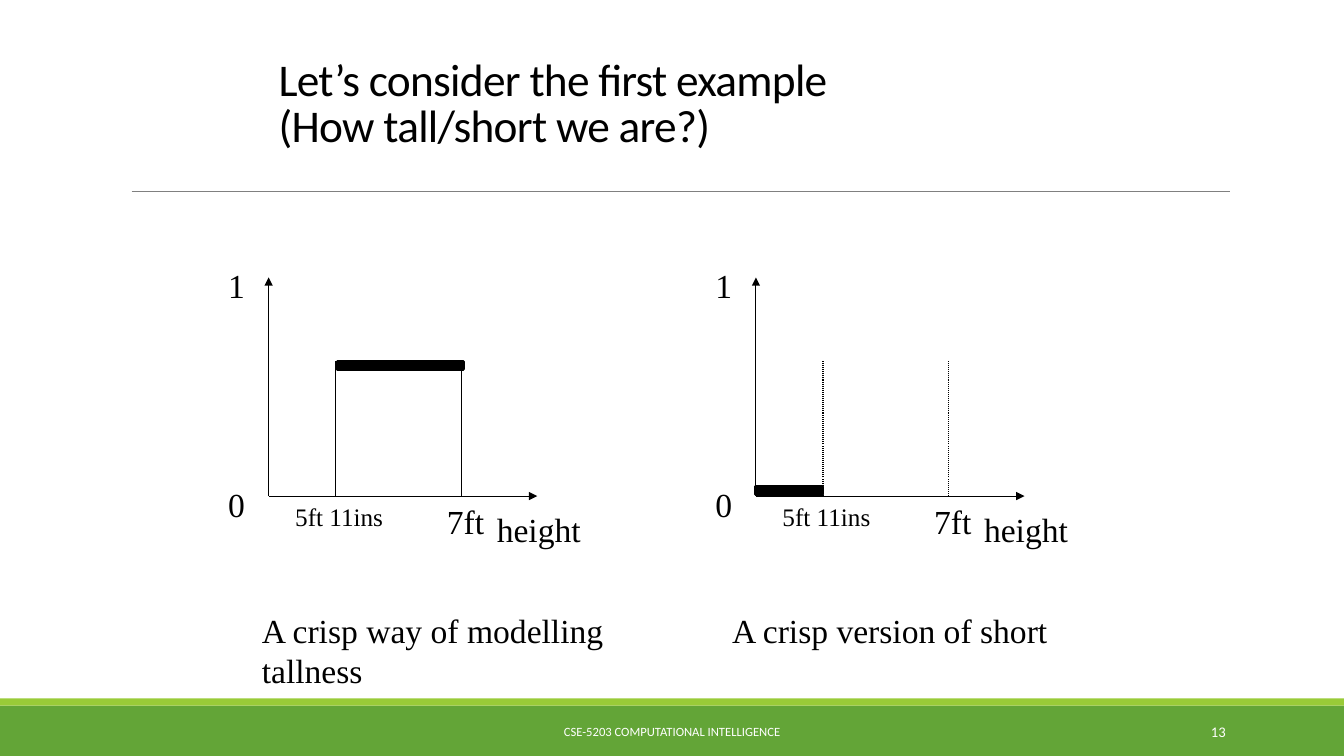
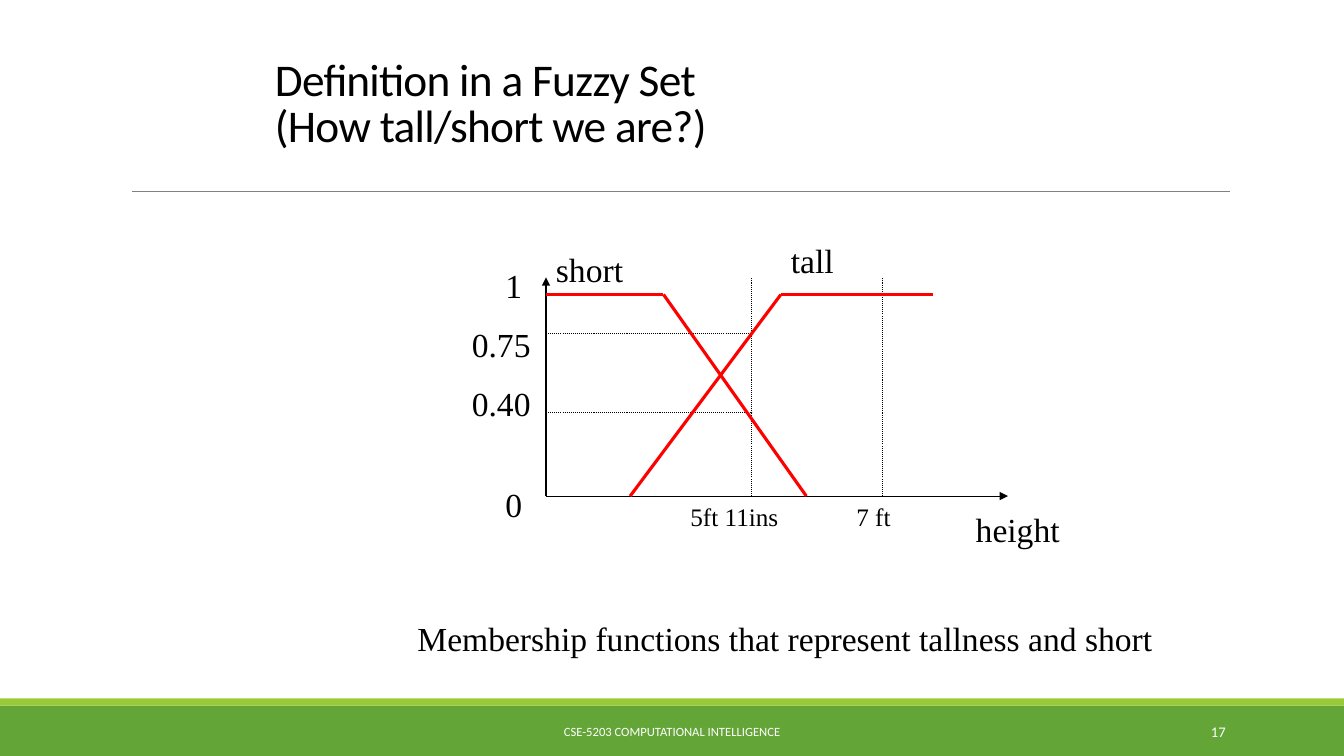
"""Build two slides that compare crisp and fuzzy sets of height."""
from lxml.etree import SubElement
from pptx import Presentation
from pptx.dml.color import RGBColor
from pptx.enum.dml import MSO_LINE
from pptx.enum.shapes import MSO_CONNECTOR, MSO_SHAPE
from pptx.enum.text import MSO_ANCHOR as ANCHOR, PP_ALIGN as ALIGN
from pptx.oxml.ns import qn
from pptx.util import Cm, Pt

BLACK, WHITE, GREY, RED = "000000", "FFFFFF", "808080", "FF0000"
GREEN, LIME = "63A537", "99CB38"
SANS, SERIF = "Calibri", "Times New Roman"
WIDTH, HEIGHT = 33.87, 19.05
BASE, AXIS_HEIGHT = 12.5, 5.51


def color(value):
    return RGBColor.from_string(value)


def write(box, text, font=SERIF, size=24, ink=BLACK, align=ALIGN.LEFT,
          anchor=ANCHOR.TOP, line_spacing=None, tracking=None):
    frame = box.text_frame
    frame.word_wrap = True
    frame.vertical_anchor = anchor
    para = frame.paragraphs[0]
    para.text = text
    para.alignment = align
    para.line_spacing = line_spacing
    for span in para.runs:
        span.font.name = font
        span.font.size = Pt(size)
        span.font.color.rgb = color(ink)
        if tracking:
            span._r.get_or_add_rPr().set("spc", str(tracking))


class Painter:
    def __init__(self, deck):
        self.deck = deck
        self.page = None

    def start(self, title, title_left, number):
        self.page = self.deck.slides.add_slide(self.deck.slide_layouts[6])
        self.bar(0, 17.78, WIDTH, 1.27, GREEN)
        self.bar(0, 17.6, WIDTH, 0.18, LIME)
        self.line((3.32, 4.82), (31, 4.82), GREY, 0.5)
        self.text(title, title_left, 1.42, 21.59, 2.54, font=SANS, size=32.4,
                  anchor=ANCHOR.BOTTOM, line_spacing=0.85, tracking=-50)
        footer = dict(font=SANS, ink=WHITE, anchor=ANCHOR.MIDDLE)
        self.text("CSE-5203 COMPUTATIONAL INTELLIGENCE", 10.24, 17.93, 13.39,
                  1.01, size=9, align=ALIGN.CENTER, **footer)
        self.text(number, 27.51, 17.93, 3.63, 1.01, size=10.5,
                  align=ALIGN.RIGHT, **footer)

    def text(self, text, left, top, width, height=1.27, **style):
        box = self.page.shapes.add_textbox(Cm(left), Cm(top), Cm(width), Cm(height))
        write(box, text, **style)

    def bar(self, left, top, width, height, fill, border=None):
        shape = self.page.shapes.add_shape(
            MSO_SHAPE.RECTANGLE, Cm(left), Cm(top), Cm(width), Cm(height))
        shape.shadow.inherit = False
        shape.fill.solid()
        shape.fill.fore_color.rgb = color(fill)
        if border:
            shape.line.color.rgb = color(fill)
            shape.line.width = Pt(border)
        else:
            shape.line.fill.background()

    def line(self, start, end, ink=BLACK, weight=0.75, dotted=False, arrow=False):
        ends = [Cm(value) for value in (*start, *end)]
        link = self.page.shapes.add_connector(MSO_CONNECTOR.STRAIGHT, *ends)
        link.line.color.rgb = color(ink)
        link.line.width = Pt(weight)
        if dotted:
            link.line.dash_style = MSO_LINE.ROUND_DOT
        properties = link._element.spPr
        if arrow:
            SubElement(properties.find(qn("a:ln")), qn("a:tailEnd"), type="triangle")
        SubElement(properties, qn("a:effectLst"))

    def axes(self, origin, length, label_offset):
        corner = (origin, BASE)
        self.line(corner, (origin, BASE - AXIS_HEIGHT), arrow=True)
        self.line(corner, (origin + length, BASE), arrow=True)
        self.text("0", origin - 1.27, 12.07, 1.27)
        self.text("1", origin - 1.27, 6.55, 1.27)
        self.text("height", origin + label_offset, 12.7, 3.18)

    def curve(self, origin, points):
        places = [(origin + x, BASE - y) for x, y in points]
        for start, end in zip(places, places[1:]):
            self.line(start, end, RED, 2.25)

    def upright(self, x, height, dotted=True):
        self.line((x, BASE), (x, BASE - height), dotted=dotted)

    def crisp_plot(self, origin, dotted, bar_left, bar_top, bar_width):
        self.axes(origin, 6.77, 5.5)
        for offset in (1.69, 4.86):
            self.upright(origin + offset, 3.4, dotted)
        self.bar(origin + bar_left, bar_top, bar_width, 0.2, BLACK, 2.25)
        self.text("5ft 11ins", origin + 0.42, BASE, 3.18, 1.02, size=18)
        self.text("7ft", origin + 4.24, BASE, 1.7)


def crisp_slide(painter):
    painter.start("Let’s consider the first example\v(How tall/short we are?)",
                  6.77, "13")
    painter.crisp_plot(6.77, False, 1.73, 9.1, 3.18)
    painter.crisp_plot(19.05, True, 0, 12.27, 1.69)
    painter.text("A crisp way of modelling tallness", 6.35, 15.24, 9.74, 2.31)
    painter.text("A crisp version of short", 18.2, 15.24, 9.74)


def fuzzy_slide(painter):
    origin, full = 13.76, 5.08
    painter.start("Definition in a Fuzzy Set\v(How tall/short we are?)", 6.68, "17")
    painter.axes(origin, 11.64, 10.58)
    for text, offset, mark in (("5ft 11ins", 3.39, 5.18), ("7 ft", 7.57, 8.47)):
        painter.upright(origin + mark, AXIS_HEIGHT)
        painter.text(text, origin + offset, BASE, 3.18, 1.02, size=18)
    for text, top, level in (("0.40", 9.53, 2.11), ("0.75", 8.05, 4.09)):
        painter.line((origin, BASE - level), (origin + 5.2, BASE - level), dotted=True)
        painter.text(text, origin - 2.12, top, 2.12)
    painter.curve(origin, [(0, full), (2.96, full), (6.56, 0)])
    painter.curve(origin, [(2.12, 0), (5.92, full), (9.74, full)])
    painter.text("short", origin, 6.14, 3.18)
    painter.text("tall", origin + 5.92, 5.93, 3.18)
    painter.text("Membership functions that represent tallness and short",
                 10.27, 15.45, 19.23)


def main():
    deck = Presentation()
    deck.slide_width, deck.slide_height = Cm(WIDTH), Cm(HEIGHT)
    painter = Painter(deck)
    crisp_slide(painter)
    fuzzy_slide(painter)
    deck.save("out.pptx")


if __name__ == "__main__":
    main()
